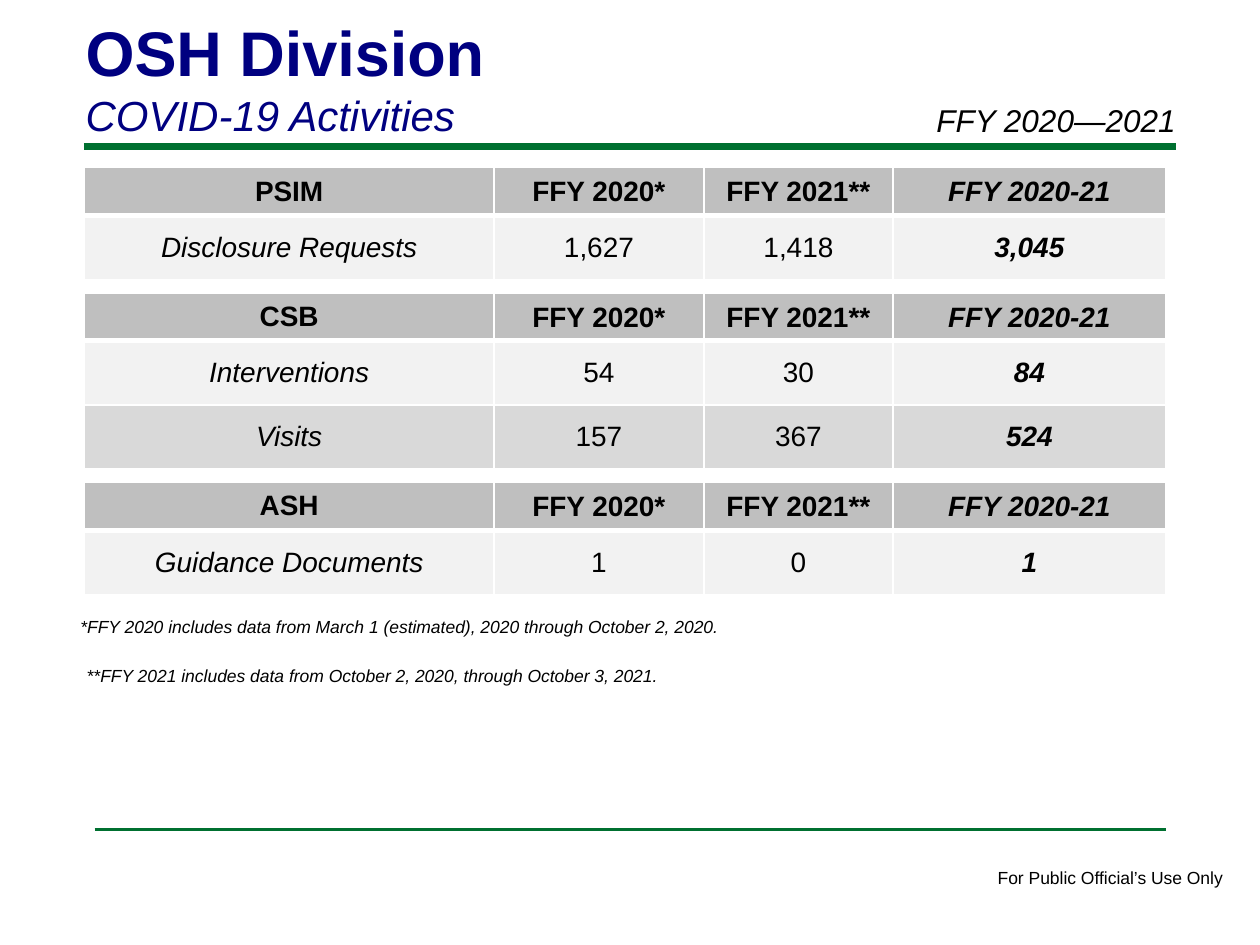
from dataclasses import dataclass

from lxml import etree
from pptx import Presentation
from pptx.dml.color import RGBColor
from pptx.enum import shapes, text
from pptx.oxml.ns import qn
from pptx.util import Pt

COLORS = {
    "green": "007030",
    "navy": "000080",
    "black": "000000",
    "white": "FFFFFF",
    "header": "BFBFBF",
    "light_row": "F2F2F2",
    "dark_row": "D9D9D9",
}
FONT = "Arial"
YEARS = ("FFY 2020*", "FFY 2021**", "FFY 2020-21")
COLUMN_WIDTHS = (234, 120, 108, 156)
HEADER_HEIGHT, ROW_HEIGHT = 27.36, 36.72
TABLES_LEFT, TABLES_TOP, TABLE_GAP = 48.24, 95.76, 7.5


@dataclass(frozen=True)
class Rule:
    left: float
    right: float
    y: float
    weight: float


@dataclass(frozen=True)
class Line:
    wording: str
    size: float
    color: str = "black"
    bold: bool = False
    italic: bool = False


@dataclass(frozen=True)
class Label:
    left: float
    top: float
    width: float
    height: float
    lines: tuple[Line, ...]
    wrap: bool = True


@dataclass(frozen=True)
class Activity:
    name: str
    counts: tuple[str, str, str]


@dataclass(frozen=True)
class Unit:
    name: str
    activities: tuple[Activity, ...]


RULES = (Rule(48, 672, 84, 4), Rule(54, 666, 474, 2))
LABELS = (
    Label(563, 491.8, 144.7, 19.4, (Line("For Public Official’s Use Only", 10),), wrap=False),
    Label(41.8, 4.3, 594, 80, (
        Line("OSH Division", 36, "navy", bold=True),
        Line("COVID-19 Activities", 24, "navy", italic=True),
    )),
    Label(38.9, 348.5, 628.6, 19.4, (
        Line("*FFY 2020 includes data from March 1 (estimated), 2020 through October 2, 2020.",
             10, italic=True),
    )),
    Label(528, 54, 180, 29, (Line("FFY 2020—2021", 18, italic=True),)),
    Label(42.5, 376.6, 628.6, 19.4, (
        Line("**FFY 2021 includes data from October 2, 2020, through October 3, 2021.",
             10, italic=True),
    )),
)
UNITS = (
    Unit("PSIM", (Activity("Disclosure Requests", ("1,627", "1,418", "3,045")),)),
    Unit("CSB", (
        Activity("Interventions", ("54", "30", "84")),
        Activity("Visits", ("157", "367", "524")),
    )),
    Unit("ASH", (Activity("Guidance Documents", ("1", "0", "1")),)),
)


def rgb(name: str) -> RGBColor:
    return RGBColor.from_string(COLORS[name])


def write_line(paragraph, line: Line) -> None:
    paragraph.text = line.wording
    font = paragraph.runs[0].font
    font.name, font.size = FONT, Pt(line.size)
    font.bold, font.italic = line.bold, line.italic
    font.color.rgb = rgb(line.color)


def draw_rule(slide, rule: Rule) -> None:
    connector = slide.shapes.add_connector(
        shapes.MSO_CONNECTOR.STRAIGHT, Pt(rule.left), Pt(rule.y), Pt(rule.right), Pt(rule.y))
    connector.line.color.rgb = rgb("green")
    connector.line.width = Pt(rule.weight)
    etree.SubElement(connector._element.spPr, qn("a:effectLst"))


def draw_label(slide, label: Label) -> None:
    box = slide.shapes.add_textbox(
        Pt(label.left), Pt(label.top), Pt(label.width), Pt(label.height))
    frame = box.text_frame
    frame.word_wrap = label.wrap
    for index, line in enumerate(label.lines):
        write_line(frame.add_paragraph() if index else frame.paragraphs[0], line)


def set_borders(cell, bottom_weight: float, top_weight: float) -> None:
    """Put white borders before the fill, as the cell schema requires."""
    properties = cell._tc.get_or_add_tcPr()
    sides = (("a:lnL", 1), ("a:lnR", 1), ("a:lnT", top_weight), ("a:lnB", bottom_weight))
    for index, (tag, weight) in enumerate(sides):
        border = etree.Element(qn(tag), w=str(int(Pt(weight))))
        fill = etree.SubElement(border, qn("a:solidFill"))
        etree.SubElement(fill, qn("a:srgbClr"), val=COLORS["white"])
        properties.insert(index, border)


def fill_cell(cell, line: Line, color: str) -> None:
    write_line(cell.text_frame.paragraphs[0], line)
    cell.text_frame.paragraphs[0].alignment = text.PP_ALIGN.CENTER
    cell.vertical_anchor = text.MSO_ANCHOR.MIDDLE
    cell.fill.solid()
    cell.fill.fore_color.rgb = rgb(color)


def draw_unit(slide, unit: Unit, top: float) -> float:
    """Draw one unit's table and return its height."""
    height = HEADER_HEIGHT + ROW_HEIGHT * len(unit.activities)
    table = slide.shapes.add_table(
        len(unit.activities) + 1, len(COLUMN_WIDTHS), Pt(TABLES_LEFT), Pt(top),
        Pt(sum(COLUMN_WIDTHS)), Pt(height)).table
    for column, width in zip(table.columns, COLUMN_WIDTHS):
        column.width = Pt(width)
    last = len(COLUMN_WIDTHS) - 1

    table.rows[0].height = Pt(HEADER_HEIGHT)
    for index, heading in enumerate((unit.name, *YEARS)):
        cell = table.cell(0, index)
        fill_cell(cell, Line(heading, 16, bold=True, italic=index == last), "header")
        set_borders(cell, bottom_weight=3, top_weight=1)
        if index:
            cell.margin_left = cell.margin_right = cell.margin_top = Pt(0.75)
            cell.margin_bottom = Pt(0)

    for row, activity in enumerate(unit.activities, start=1):
        table.rows[row].height = Pt(ROW_HEIGHT)
        for index, entry in enumerate((activity.name, *activity.counts)):
            cell = table.cell(row, index)
            line = Line(entry, 16, bold=index == last, italic=index in (0, last))
            fill_cell(cell, line, "light_row" if row % 2 else "dark_row")
            set_borders(cell, bottom_weight=1, top_weight=3 if row == 1 else 1)
    return height


def main() -> None:
    presentation = Presentation()
    presentation.slide_width, presentation.slide_height = Pt(720), Pt(540)
    slide = presentation.slides.add_slide(presentation.slide_layouts[6])
    for rule in RULES:
        draw_rule(slide, rule)
    for label in LABELS:
        draw_label(slide, label)
    top = TABLES_TOP
    for unit in UNITS:
        top += draw_unit(slide, unit, top) + TABLE_GAP
    presentation.save("out.pptx")


if __name__ == "__main__":
    main()
